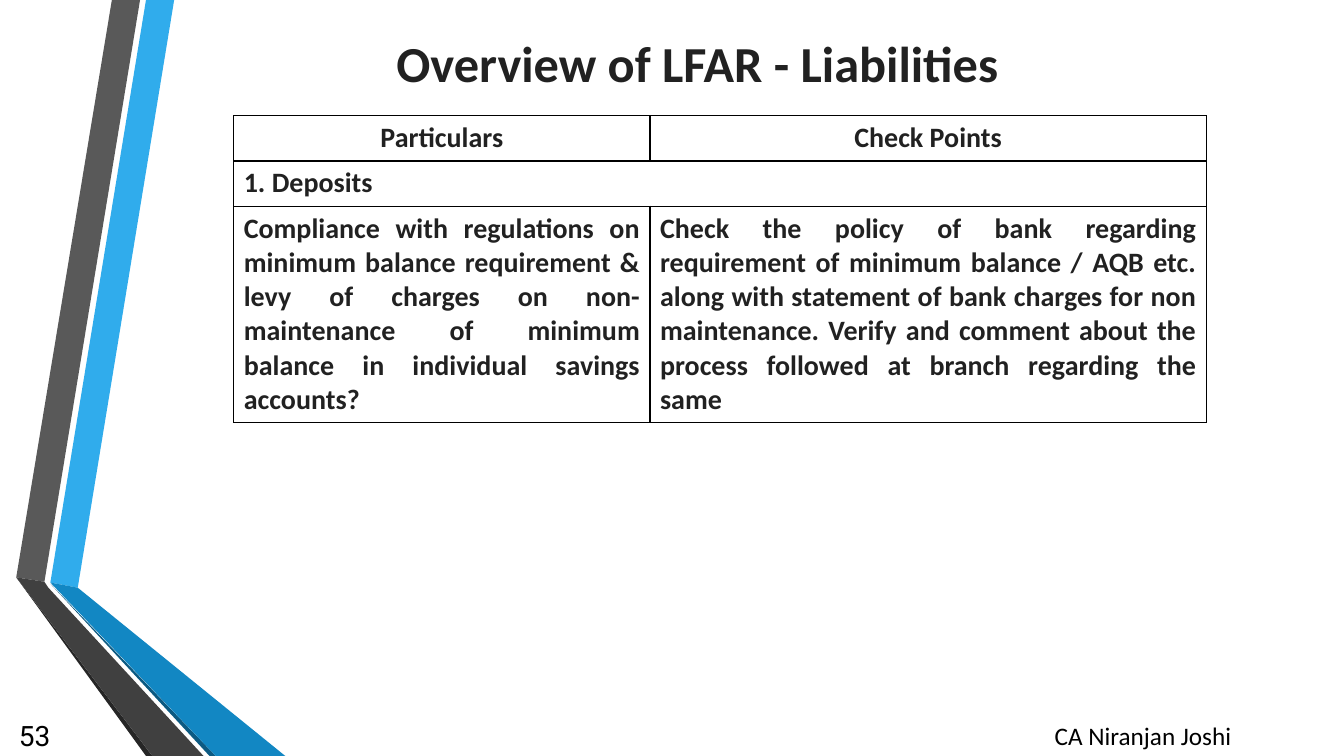
from dataclasses import dataclass

from lxml import etree
from pptx import Presentation
from pptx import util as u
from pptx.dml.color import RGBColor
from pptx.enum import text
from pptx.oxml import ns


@dataclass(frozen=True)
class Theme:
    ink: str = "212121"
    black: str = "000000"
    blue: str = "30ACEC"
    blue_mid: str = "1287C3"
    blue_dark: str = "0C5A82"
    grey: str = "595959"
    grey_mid: str = "404040"
    grey_dark: str = "262626"
    font: str = "Calibri"
    number_font: str = "Roboto"
    title_size: int = 36
    body_size: int = 20
    footer_size: int = 18


theme = Theme()
ALIGN = text.PP_ALIGN
ANCHOR = text.MSO_ANCHOR


def write(frame, words, size=theme.body_size, color=theme.ink, font=theme.font,
          bold=False, align=ALIGN.LEFT, anchor=ANCHOR.TOP):
    frame.word_wrap = True
    frame.vertical_anchor = anchor
    para = frame.paragraphs[0]
    para.alignment = align
    span = para.add_run()
    span.text = words
    span.font.size = u.Pt(size)
    span.font.bold = bold
    span.font.name = font
    span.font.color.rgb = RGBColor.from_string(color)


def outline_cell(cell):
    """Give the cell a 1 pt line on all four sides and no fill."""
    props = cell._tc.get_or_add_tcPr()
    for side in ("lnL", "lnR", "lnT", "lnB"):
        line = etree.SubElement(props, ns.qn(f"a:{side}"), w=str(u.Pt(1)))
        fill = etree.SubElement(line, ns.qn("a:solidFill"))
        etree.SubElement(fill, ns.qn("a:srgbClr"), val=theme.black)
    cell.fill.background()


deck = Presentation()
deck.slide_width, deck.slide_height = u.Cm(33.87), u.Cm(19.05)
page = deck.slides.add_slide(deck.slide_layouts[6])

# Folded ribbons on the left; corner points in centimetres
bottom = 19.05
ribbons = [
    (theme.blue, [(1.27, 14.68), (1.96, 14.81), (4.39, 0), (3.68, 0)]),
    (theme.grey, [(3.53, 0), (2.82, 0), (0.41, 14.55), (1.12, 14.66)]),
    (theme.grey_dark, [(0.41, 14.55), (3.68, bottom), (3.84, bottom)]),
    (theme.blue_dark, [(1.27, 14.71), (5.28, bottom), (5.44, bottom)]),
    (theme.blue_mid, [(1.27, 14.68), (5.44, bottom), (7.19, bottom), (1.96, 14.81)]),
    (theme.grey_mid, [(0.41, 14.55), (3.84, bottom), (5.13, bottom), (1.22, 14.81),
                      (1.12, 14.66)]),
]
for color, corners in ribbons:
    start, *rest = [(round(x * 100), round(y * 100)) for x, y in corners]
    builder = page.shapes.build_freeform(*start, scale=u.Cm(0.01))
    builder.add_line_segments(rest, close=True)
    ribbon = builder.convert_to_shape()
    ribbon.shadow.inherit = False
    ribbon.fill.solid()
    ribbon.fill.fore_color.rgb = RGBColor.from_string(color)
    ribbon.line.fill.background()

# Title, footer and page number
labels = [
    ("Overview of LFAR - Liabilities", (6.15, 0.64, 22.86, 1.88),
     dict(size=theme.title_size, bold=True, align=ALIGN.CENTER, anchor=ANCHOR.MIDDLE)),
    ("CA Niranjan Joshi", (24.36, 18.03, 8.89, 1.02),
     dict(size=theme.footer_size, color=theme.black, align=ALIGN.CENTER)),
    ("53", (0, 18.01, 1.52, 1.02),
     dict(color=theme.black, font=theme.number_font, align=ALIGN.RIGHT,
          anchor=ANCHOR.MIDDLE)),
]
for words, place, style in labels:
    box = page.shapes.add_textbox(*[u.Cm(length) for length in place])
    write(box.text_frame, words, **style)

# Check list table
widths = [10.49, 14.02]
heights = [1.14, 1.14, 5.44]
rows = [
    (ALIGN.CENTER, ["Particulars", "Check Points"]),
    (ALIGN.LEFT, ["1. Deposits"]),
    (ALIGN.JUSTIFY, [
        "Compliance with regulations on minimum balance requirement & levy of charges "
        "on non- maintenance of minimum balance in individual savings accounts?",
        "Check the policy of bank regarding requirement of minimum balance / AQB etc. "
        "along with statement of bank charges for non maintenance. Verify and comment "
        "about the process followed at branch regarding the same",
    ]),
]
table = page.shapes.add_table(len(rows), len(widths), u.Cm(5.89), u.Cm(2.92),
                              u.Cm(sum(widths)), u.Cm(sum(heights))).table
table.first_row = table.horz_banding = False
for column, width in zip(table.columns, widths):
    column.width = u.Cm(width)
for row, height, (align, entries) in zip(table.rows, heights, rows):
    row.height = u.Cm(height)
    for cell in row.cells:
        outline_cell(cell)
    if len(entries) == 1:
        row.cells[0].merge(row.cells[1])
    for cell, words in zip(row.cells, entries):
        write(cell.text_frame, words, bold=True, align=align)

deck.save("out.pptx")
